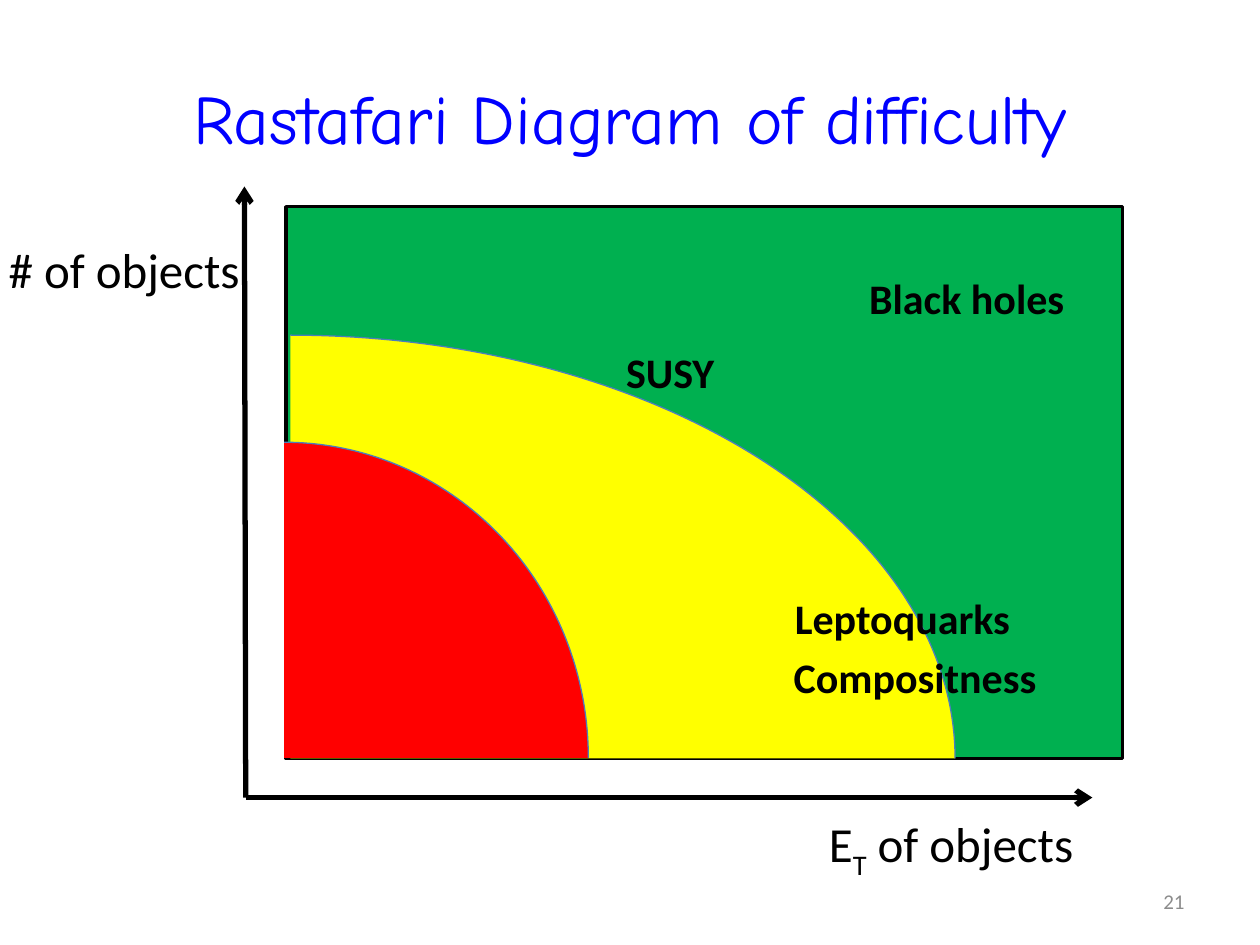
from dataclasses import dataclass

from lxml import etree
from pptx import Presentation
from pptx.dml.color import RGBColor
from pptx.enum.shapes import MSO_CONNECTOR, MSO_SHAPE
from pptx.enum.text import MSO_ANCHOR, MSO_AUTO_SIZE, PP_ALIGN
from pptx.oxml.ns import qn
from pptx.util import Emu, Pt

RECT, ARC = MSO_SHAPE.RECTANGLE, MSO_SHAPE.ARC
STRAIGHT = MSO_CONNECTOR.STRAIGHT
TOP, MIDDLE = MSO_ANCHOR.TOP, MSO_ANCHOR.MIDDLE
LEFT, CENTER, RIGHT = PP_ALIGN.LEFT, PP_ALIGN.CENTER, PP_ALIGN.RIGHT
FIT, FIXED = MSO_AUTO_SIZE.SHAPE_TO_FIT_TEXT, MSO_AUTO_SIZE.NONE

EMU_PER_PX = 9144
COLORS = {
    "black": "000000", "blue": "0000FF", "gray": "8C8C8C", "edge": "4B7EBC",
    "green": "00B050", "yellow": "FFFF00", "red": "FF0000",
}


@dataclass
class Zone:
    kind: int
    box: tuple[int, int, int, int]
    fill: str
    line: str
    weight: float


@dataclass
class Label:
    text: str
    box: tuple[int, int, int, int]
    size: float = 24
    bold: bool = False
    color: str = "black"
    font: str = "Calibri"
    align: int = LEFT
    anchor: int = TOP
    wrap: bool = False
    subscript: str = ""
    rest: str = ""


ZONES = [
    Zone(RECT, (227, 164, 664, 438), "green", "black", 2),
    Zone(ARC, (-297, 266, 1055, 672), "yellow", "edge", 0.75),
    Zone(ARC, (-16, 351, 483, 501), "red", "edge", 0.75),
]
ORIGIN = (195, 633)
AXIS_ENDS = [(867, 633), (194, 148)]
LABELS = [
    Label("Rastafari Diagram of difficulty", (50, 30, 900, 125), 39.6, color="blue",
          font="Comic Neue", align=CENTER, anchor=MIDDLE, wrap=True),
    Label("21", (717, 695, 233, 40), 12, color="gray", align=RIGHT, anchor=MIDDLE, wrap=True),
    Label("E", (648, 641, 218, 57), 28, subscript="T", rest=" of objects"),
    Label("# of objects", (-3, 185, 206, 57), 28),
    Label("Black holes", (680, 211, 177, 50), bold=True),
    Label("SUSY", (487, 270, 91, 50), bold=True),
    Label("Compositness", (620, 512, 215, 50), bold=True),
    Label("Leptoquarks", (621, 465, 193, 50), bold=True),
]


def px(*values: int) -> list[Emu]:
    return [Emu(v * EMU_PER_PX) for v in values]


def rgb(name: str) -> RGBColor:
    return RGBColor.from_string(COLORS[name])


def set_all(target, formats: dict) -> None:
    for name, value in formats.items():
        setattr(target, name, value)


def draw_zone(s, zone: Zone) -> None:
    sp = s.shapes.add_shape(zone.kind, *px(*zone.box))
    sp.shadow.inherit = False
    sp.fill.solid()
    sp.fill.fore_color.rgb = rgb(zone.fill)
    sp.line.color.rgb = rgb(zone.line)
    sp.line.width = Pt(zone.weight)


def draw_axis(s, end: tuple[int, int]) -> None:
    cx = s.shapes.add_connector(STRAIGHT, *px(*ORIGIN, *end))
    cx.line.color.rgb = rgb("black")
    cx.line.width = Pt(3)
    etree.SubElement(cx.line._get_or_add_ln(), qn("a:tailEnd"), type="arrow")
    etree.SubElement(cx._element.spPr, qn("a:effectLst"))


def draw_label(s, label: Label) -> None:
    tf = s.shapes.add_textbox(*px(*label.box)).text_frame
    set_all(tf, {
        "word_wrap": label.wrap,
        "auto_size": FIXED if label.wrap else FIT,
        "vertical_anchor": label.anchor,
    })
    p = tf.paragraphs[0]
    p.alignment = label.align
    for text in filter(None, (label.text, label.subscript, label.rest)):
        r = p.add_run()
        r.text = text
        set_all(r.font, {"name": label.font, "size": Pt(label.size), "bold": label.bold})
        r.font.color.rgb = rgb(label.color)
        if text == label.subscript:
            r._r.get_or_add_rPr().set("baseline", "-25000")


def main() -> None:
    prs = Presentation()
    prs.slide_width, prs.slide_height = px(1000, 750)
    s = prs.slides.add_slide(prs.slide_layouts[6])
    for zone in ZONES:
        draw_zone(s, zone)
    for end in AXIS_ENDS:
        draw_axis(s, end)
    for label in LABELS:
        draw_label(s, label)
    prs.save("out.pptx")


if __name__ == "__main__":
    main()
